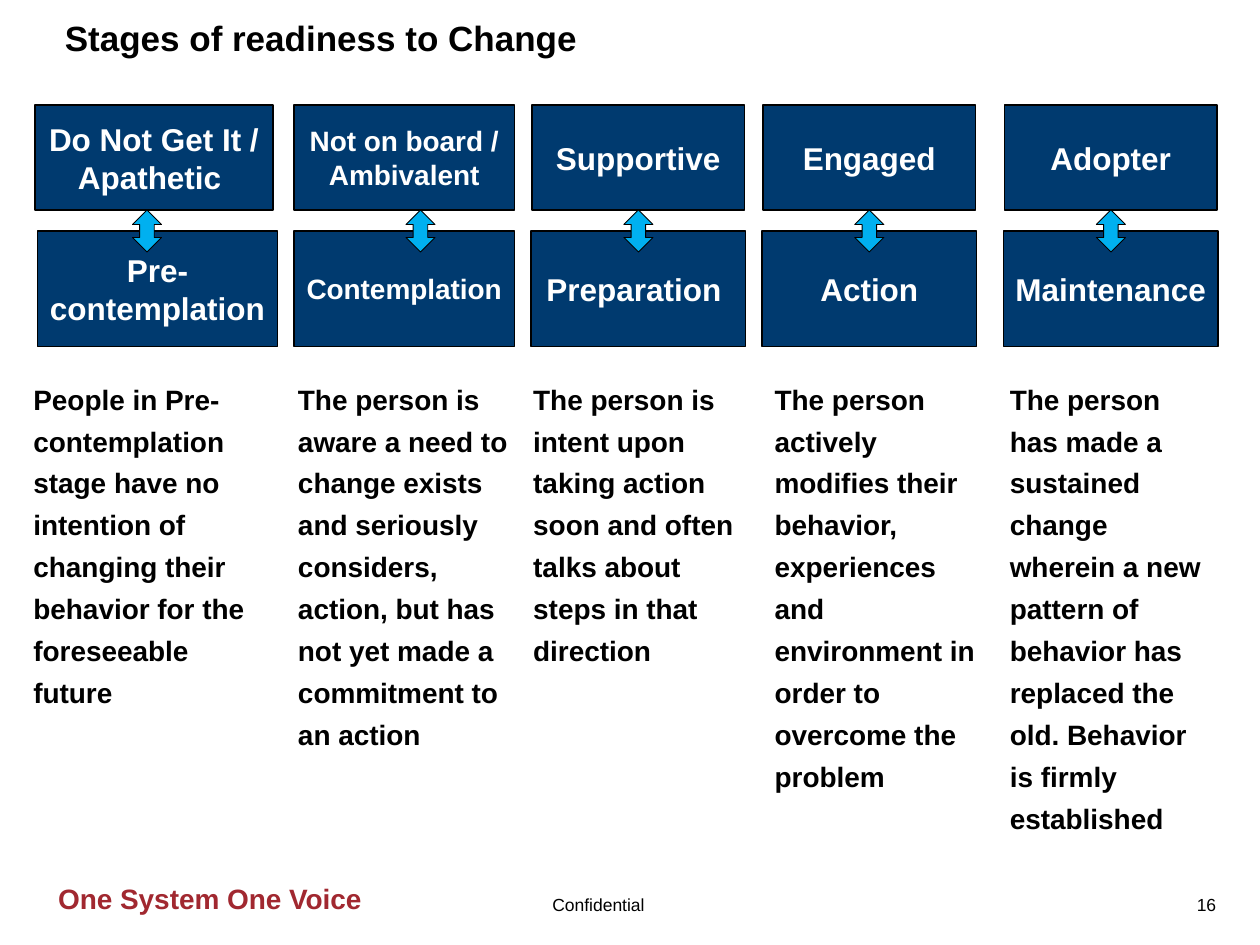
from pptx import Presentation
from pptx.dml.color import RGBColor
from pptx.enum.shapes import MSO_SHAPE
from pptx.enum.text import MSO_ANCHOR, PP_ALIGN
from pptx.util import Pt

NAVY = RGBColor(0x00, 0x3A, 0x6F)
SKY = RGBColor(0x00, 0xB0, 0xF0)
RED = RGBColor(0xA1, 0x28, 0x30)
BLACK = RGBColor(0, 0, 0)
WHITE = RGBColor(255, 255, 255)

TOP, TOP_H = 60, 60
LOW, LOW_H = 132, 66
NOTE = 210
ARROW_W, ARROW_H = 16.6, 24

# Per stage: attitude (text, size, left, width), phase (same),
# arrow centre, note (text, left, width)
STAGES = [
    (("Do Not Get It /\nApathetic ", 18, 20, 136),
     ("Pre-contemplation", 18, 21.5, 137), 84,
     ("People in Pre-contemplation stage have no intention of changing "
      "their behavior for the foreseeable future", 12, 146)),
    (("Not on board /\nAmbivalent", 16, 168, 126),
     ("Contemplation", 16, 168, 126), 240.3,
     ("The person is aware a need to change exists and seriously "
      "considers, action, but has not yet made a commitment to an action",
      163.2, 140.4)),
    (("Supportive", 18, 304, 121.5),
     ("Preparation ", 18, 303.5, 122.5), 364.8,
     ("The person is intent upon taking action soon and often talks about "
      "steps in that direction", 297.6, 134.4)),
    (("Engaged", 18, 436, 121.5),
     ("Action", 18, 435.5, 122.5), 496.8,
     ("The person actively modifies their behavior, experiences and "
      "environment in order to overcome the problem", 435.6, 135.6)),
    (("Adopter", 18, 574, 121.5),
     ("Maintenance", 18, 573.5, 122.5), 634.8,
     ("The person has made a sustained change wherein a new pattern of "
      "behavior has replaced the old. Behavior is firmly established",
      570, 128.4)),
]


def write(frame, text, size, color, bold=True, align=PP_ALIGN.LEFT, gap=1):
    frame.text = text
    frame.word_wrap = True
    for para in frame.paragraphs:
        para.alignment = align
        para.line_spacing = gap
        for run in para.runs:
            font = run.font
            font.name, font.size, font.bold = "Arial", Pt(size), bold
            font.color.rgb = color


def add_shape(slide, kind, left, top, width, height, fill, line):
    shape = slide.shapes.add_shape(kind, Pt(left), Pt(top), Pt(width), Pt(height))
    shape.shadow.inherit = False
    shape.fill.solid()
    shape.fill.fore_color.rgb = fill
    shape.line.color.rgb = BLACK
    shape.line.width = Pt(line)
    return shape


def add_box(slide, label, top, height):
    text, size, left, width = label
    box = add_shape(slide, MSO_SHAPE.RECTANGLE, left, top, width, height, NAVY, 0.75)
    frame = box.text_frame
    frame.margin_left = frame.margin_right = Pt(3.6)
    frame.margin_top = frame.margin_bottom = Pt(3.6)
    frame.vertical_anchor = MSO_ANCHOR.MIDDLE
    write(frame, text, size, WHITE, align=PP_ALIGN.CENTER)


def add_text(slide, text, left, top, width, height, size, color=BLACK, **style):
    box = slide.shapes.add_textbox(Pt(left), Pt(top), Pt(width), Pt(height))
    write(box.text_frame, text, size, color, **style)
    return box


def main():
    deck = Presentation()
    deck.slide_width, deck.slide_height = Pt(720), Pt(540)
    slide = deck.slides.add_slide(deck.slide_layouts[6])

    # Title
    title = add_text(slide, "Stages of readiness to Change", 24, 6, 672, 55, 20)
    title.text_frame.margin_left = Pt(13)

    # Stage columns
    for mood, phase, mid, (note, left, width) in STAGES:
        add_box(slide, mood, TOP, TOP_H)
        add_box(slide, phase, LOW, LOW_H)
        add_shape(slide, MSO_SHAPE.UP_DOWN_ARROW, mid - ARROW_W / 2,
                  TOP + TOP_H, ARROW_W, ARROW_H, SKY, 0.5)
        add_text(slide, note, left, NOTE, width, 276, 16, gap=1.25)

    # Footer
    add_text(slide, "One System One Voice", 18, 500.4, 204, 26.6, 16, RED,
             align=PP_ALIGN.CENTER)
    add_text(slide, "Confidential", 288, 507.6, 108, 19.4, 10, bold=False,
             align=PP_ALIGN.CENTER)
    add_text(slide, "16", 669.6, 507.6, 32.4, 19.4, 10, bold=False,
             align=PP_ALIGN.RIGHT)

    deck.save("out.pptx")


if __name__ == "__main__":
    main()
